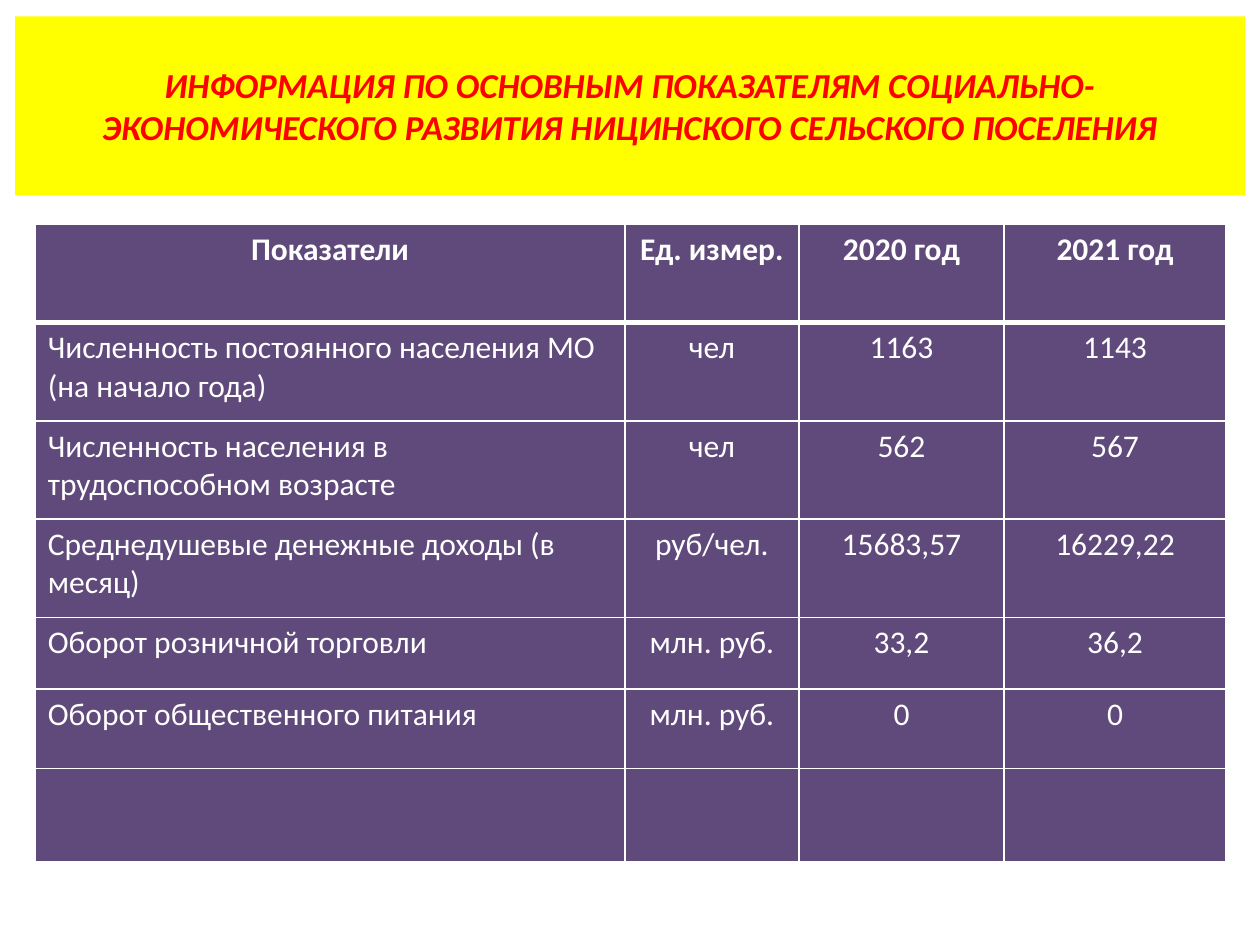
from dataclasses import dataclass

from lxml.etree import SubElement
from pptx import Presentation
from pptx.dml.color import RGBColor
from pptx.enum.shapes import MSO_SHAPE
from pptx.enum.text import MSO_ANCHOR, PP_ALIGN
from pptx.oxml.ns import qn
from pptx.util import Inches, Pt


@dataclass(frozen=True)
class Theme:
    font: str = "Calibri"
    banner: str = "FFFF00"
    title: str = "FF0000"
    cell: str = "604A7B"
    light: str = "FFFFFF"
    title_size: int = 20
    cell_size: int = 18
    thin: int = 1
    thick: int = 3


THEME = Theme()

TITLE = ("ИНФОРМАЦИЯ ПО ОСНОВНЫМ ПОКАЗАТЕЛЯМ СОЦИАЛЬНО-ЭКОНОМИЧЕСКОГО "
         "РАЗВИТИЯ НИЦИНСКОГО СЕЛЬСКОГО ПОСЕЛЕНИЯ")
ROWS = [
    ("Показатели", "Ед. измер.", "2020 год", "2021 год"),
    ("Численность постоянного населения МО (на начало года)", "чел", "1163", "1143"),
    ("Численность населения в трудоспособном возрасте", "чел", "562", "567"),
    ("Среднедушевые денежные доходы (в месяц)", "руб/чел.", "15683,57", "16229,22"),
    ("Оборот розничной торговли", "млн. руб.", "33,2", "36,2"),
    ("Оборот общественного питания", "млн. руб.", "0", "0"),
    ("", "", "", ""),
]
WIDTHS = [4.68, 1.38, 1.63, 1.76]
HEIGHTS = [0.78, 0.78, 0.78, 0.78, 0.57, 0.63, 0.74]


def paint(part, color):
    part.fill.solid()
    part.fill.fore_color.rgb = RGBColor.from_string(color)


def write(frame, text, size, color, align, bold=False, italic=False):
    frame.text = text
    para = frame.paragraphs[0]
    para.alignment = align
    # An empty cell has no run, so its size sits on the paragraph
    for font in [run.font for run in para.runs] or [para.font]:
        font.name = THEME.font
        font.size = Pt(size)
        font.bold = bold
        font.italic = italic
        font.color.rgb = RGBColor.from_string(color)


def edge(cell, row):
    """Draw the cell's borders, with a thick rule under the header."""
    props = cell._tc.get_or_add_tcPr()
    heavy = {0: "lnB", 1: "lnT"}.get(row)
    for side in ("lnL", "lnR", "lnT", "lnB"):
        width = THEME.thick if side == heavy else THEME.thin
        line = SubElement(props, qn(f"a:{side}"), w=str(Pt(width)))
        fill = SubElement(line, qn("a:solidFill"))
        SubElement(fill, qn("a:srgbClr"), val=THEME.light)


def add_banner(slide):
    shape = slide.shapes.add_shape(
        MSO_SHAPE.RECTANGLE, Inches(0.12), Inches(0.13), Inches(9.76), Inches(1.42))
    shape.shadow.inherit = False
    shape.line.fill.background()
    paint(shape, THEME.banner)
    frame = shape.text_frame
    frame.word_wrap = True
    frame.vertical_anchor = MSO_ANCHOR.MIDDLE
    write(frame, TITLE, THEME.title_size, THEME.title, PP_ALIGN.CENTER,
          bold=True, italic=True)


def add_grid(slide):
    table = slide.shapes.add_table(
        len(ROWS), len(WIDTHS), Inches(0.28), Inches(1.78),
        Inches(sum(WIDTHS)), Inches(sum(HEIGHTS))).table
    for col, width in zip(table.columns, WIDTHS):
        col.width = Inches(width)
    for row, height in zip(table.rows, HEIGHTS):
        row.height = Inches(height)
    for i, row in enumerate(ROWS):
        for j, text in enumerate(row):
            cell = table.cell(i, j)
            align = PP_ALIGN.LEFT if i and not j else PP_ALIGN.CENTER
            edge(cell, i)
            paint(cell, THEME.cell)
            write(cell.text_frame, text, THEME.cell_size, THEME.light, align,
                  bold=i == 0)


def main():
    deck = Presentation()
    deck.slide_width, deck.slide_height = Inches(10), Inches(7.5)
    slide = deck.slides.add_slide(deck.slide_layouts[6])
    # Table of indicators
    add_grid(slide)
    # Title banner
    add_banner(slide)
    deck.save("out.pptx")


if __name__ == "__main__":
    main()
